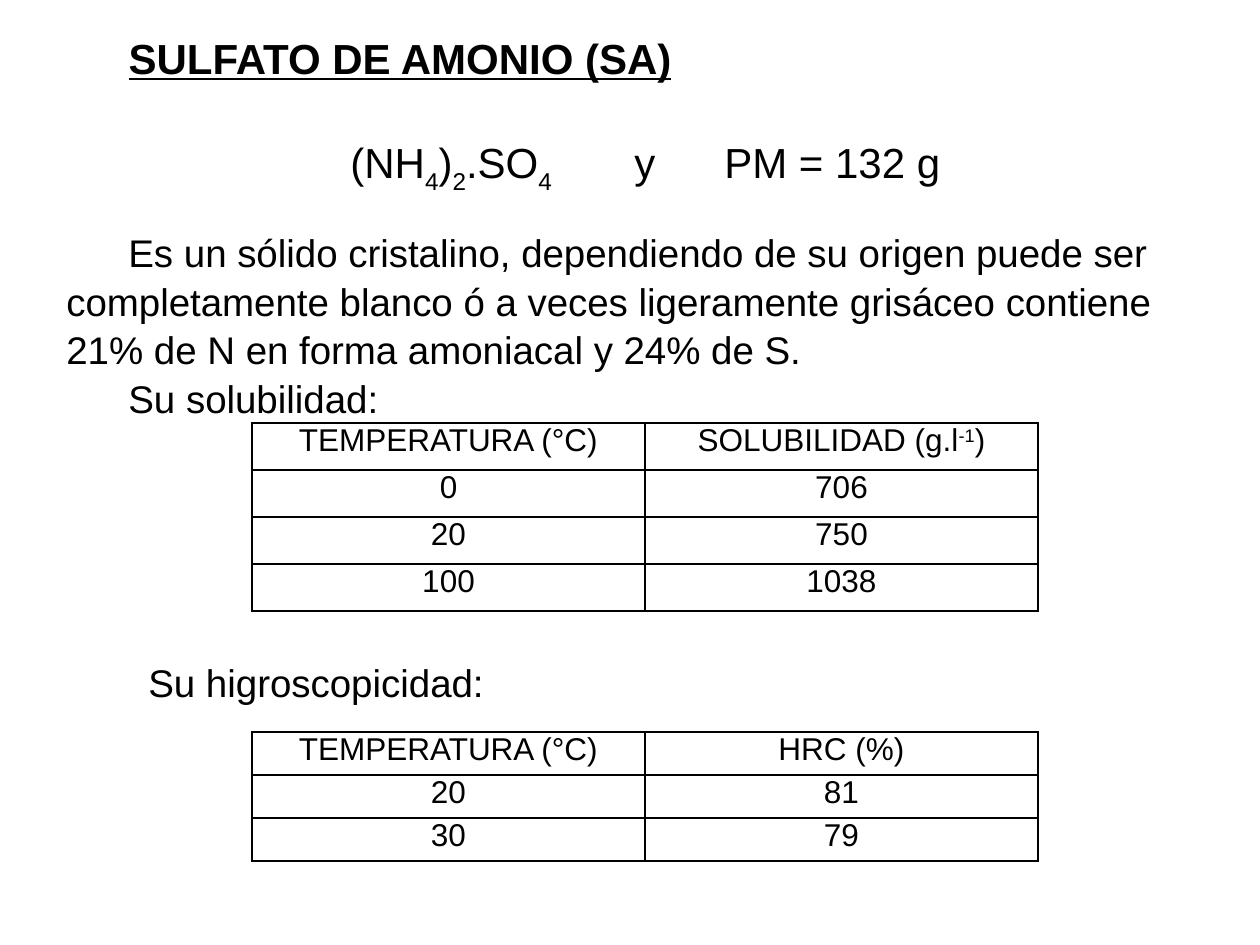
from lxml.etree import SubElement
from pptx import Presentation
from pptx.dml.color import RGBColor
from pptx.enum.text import MSO_ANCHOR, MSO_AUTO_SIZE, PP_ALIGN
from pptx.oxml.ns import qn
from pptx.util import Emu, Pt

PX = 914400 // 126
INDENT = 62
BODY = ("Es un sólido cristalino, dependiendo de su origen puede ser completamente blanco "
        "ó a veces ligeramente grisáceo contiene 21% de N en forma amoniacal y 24% de S.")
FORMULA = [("\t(NH", 0), ("4", -30), (")", 0), ("2", -30), (".SO", 0), ("4", -30),
           ("\ty\tPM = 132 g", 0)]
SOLUBILITY = [("TEMPERATURA (°C)", [("SOLUBILIDAD (g.l", 0), ("-1", 30), (")", 0)]),
              ("0", "706"), ("20", "750"), ("100", "1038")]
HUMIDITY = [("TEMPERATURA (°C)", "HRC (%)"), ("20", "81"), ("30", "79")]


def px(length):
    return Emu(length * PX)


def color(value):
    return RGBColor.from_string(value)


class SlideStyle:
    """Text and table style together with the slide being filled."""

    def __init__(self, page):
        self.page = page
        self.font = "Arial"
        self.ink = "000000"

    def fill_paragraph(self, para, content, size, align=PP_ALIGN.LEFT, indent=0, tabs=()):
        spans = [(content, 0)] if isinstance(content, str) else content
        for text, baseline in spans:
            span = para.add_run()
            span.text = text
            if baseline:
                span.font._element.set("baseline", str(baseline * 1000))
        para.alignment = align
        para.font.name = self.font
        para.font.size = Pt(size)
        para.font.color.rgb = color(self.ink)
        properties = para._p.get_or_add_pPr()
        if indent:
            properties.set("marL", "0")
            properties.set("indent", str(px(indent)))
        if tabs:
            stops = SubElement(properties, qn("a:tabLst"))
            for stop in tabs:
                SubElement(stops, qn("a:tab"), pos=str(px(stop)), algn="l")
            properties.insert_element_before(stops, "a:defRPr", "a:extLst")

    def title(self, text, left, top, width, height):
        box = self.page.shapes.title
        box.left, box.top, box.width, box.height = map(px, (left, top, width, height))
        frame = box.text_frame
        frame.auto_size = MSO_AUTO_SIZE.NONE
        frame.vertical_anchor = MSO_ANCHOR.MIDDLE
        para = frame.paragraphs[0]
        self.fill_paragraph(para, text, 24, indent=INDENT)
        para.font.bold = para.font.underline = True

    def text(self, paragraphs, left, top, width, height):
        box = self.page.shapes.add_textbox(*map(px, (left, top, width, height)))
        frame = box.text_frame
        frame.word_wrap = True
        for index, (content, size, before, options) in enumerate(paragraphs):
            para = frame.add_paragraph() if index else frame.paragraphs[0]
            self.fill_paragraph(para, content, size, **options)
            para.line_spacing = 1.05
            para.space_before = Pt(before)

    def table(self, rows, left, top, column_width, row_height):
        columns = len(rows[0])
        table = self.page.shapes.add_table(
            len(rows), columns, px(left), px(top),
            px(column_width * columns), px(row_height * len(rows))).table
        table.first_row = table.horz_banding = False
        for column in table.columns:
            column.width = px(column_width)
        for row, values in zip(table.rows, rows):
            row.height = px(row_height)
            for cell, content in zip(row.cells, values):
                cell.margin_left = cell.margin_right = px(9)
                cell.margin_top = cell.margin_bottom = 0
                self.fill_paragraph(cell.text_frame.paragraphs[0], content, 18,
                                    PP_ALIGN.CENTER)
                self.border(cell)
                cell.fill.background()

    def border(self, cell):
        properties = cell._tc.get_or_add_tcPr()
        for side in ("lnL", "lnR", "lnT", "lnB"):
            line = SubElement(properties, qn(f"a:{side}"), w=str(Pt(1)))
            fill = SubElement(line, qn("a:solidFill"))
            SubElement(fill, qn("a:srgbClr"), val=self.ink)


def main():
    deck = Presentation()
    deck.slide_width, deck.slide_height = px(1260), px(945)
    style = SlideStyle(deck.slides.add_slide(deck.slide_layouts[5]))
    first_line = {"indent": INDENT}
    style.title("SULFATO DE AMONIO (SA)", 54, 26, 1150, 63)
    style.text([(FORMULA, 24, 0, {"tabs": (284, 568, 658)}),
                (BODY, 22, 18, first_line),
                ("Su solubilidad:", 22, 0, first_line)], 54, 127, 1150, 286)
    style.table(SOLUBILITY, 252, 423, 393, 47)
    style.text([("Su higroscopicidad:", 22, 0, first_line)], 74, 651, 427, 59)
    style.table(HUMIDITY, 252, 732, 393, 43)
    deck.save("out.pptx")


if __name__ == "__main__":
    main()
